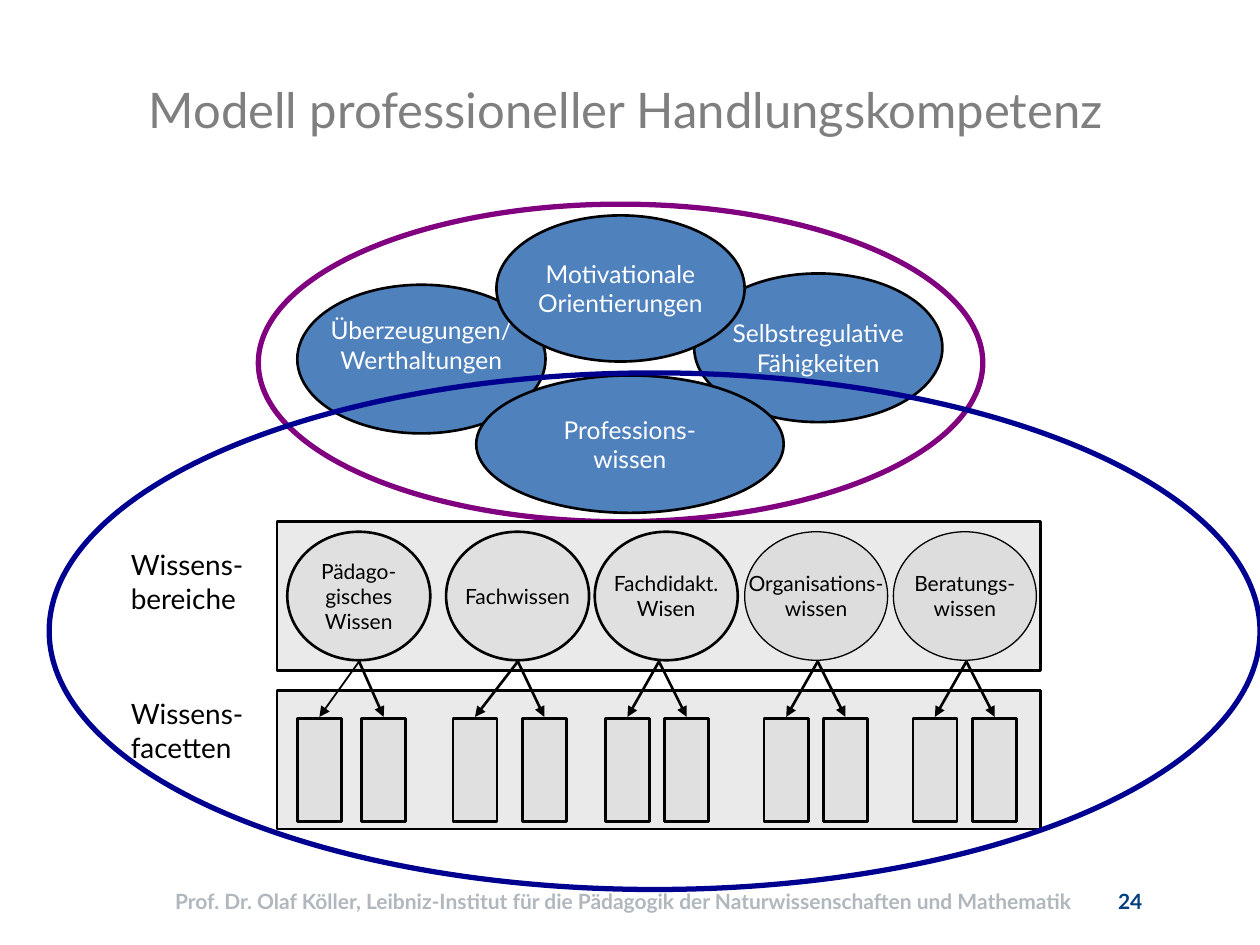
"""Build the slide on the model of professional competence."""
from lxml import etree
from pptx import Presentation
from pptx.dml.color import RGBColor
from pptx.enum import shapes, text
from pptx.oxml import ns
from pptx.util import Pt

COLORS = {
    "title": "7F7F7F", "footer": "B0B7BD", "number": "003F7D",
    "blue": "4F81BD", "white": "FFFFFF", "black": "000000",
    "purple": "800080", "navy": "000090",
    "panel": "EAEAEA", "core": "E0E0E0", "extra": "DDDDDD",
}
OVAL = shapes.MSO_SHAPE.OVAL
RECTANGLE = shapes.MSO_SHAPE.RECTANGLE
CENTER = text.PP_ALIGN.CENTER
MIDDLE = text.MSO_ANCHOR.MIDDLE
TOP = text.MSO_ANCHOR.TOP

deck = Presentation()
deck.slide_width, deck.slide_height = Pt(720), Pt(540)
COLUMN = deck.slide_width / 100
ROW = deck.slide_height / 75
page = deck.slides.add_slide(deck.slide_layouts[5])


def write(box, lines, size, color, align=CENTER, anchor=MIDDLE, bold=False, wrap=False):
    frame = box.text_frame
    frame.auto_size = text.MSO_AUTO_SIZE.NONE
    frame.word_wrap = wrap
    frame.vertical_anchor = anchor
    for index, line in enumerate(lines):
        para = frame.add_paragraph() if index else frame.paragraphs[0]
        para.alignment = align
        span = para.add_run()
        span.text = line
        span.font.name = "Lato"
        span.font.size = Pt(size)
        span.font.bold = bold
        span.font.color.rgb = RGBColor.from_string(COLORS[color])


def draw(kind, left, top, width, height, fill=None, line="black", weight=1.5):
    box = page.shapes.add_shape(
        kind, int(left * COLUMN), int(top * ROW), int(width * COLUMN), int(height * ROW))
    box.shadow.inherit = False
    if fill:
        box.fill.solid()
        box.fill.fore_color.rgb = RGBColor.from_string(COLORS[fill])
    else:
        box.fill.background()
    box.line.color.rgb = RGBColor.from_string(COLORS[line])
    box.line.width = Pt(weight)
    return box


title = page.shapes.title
title.left, title.top = int(10.8 * COLUMN), int(5.8 * ROW)
title.width, title.height = int(89.2 * COLUMN), int(5.7 * ROW)
write(title, ["Modell professioneller Handlungskompetenz"], 28, "title",
      align=text.PP_ALIGN.LEFT, anchor=TOP, wrap=True)

footers = [
    (87.4, 4.6, "24", "number"),
    (11.5, 76, "Prof. Dr. Olaf Köller, Leibniz-Institut für die Pädagogik der "
               "Naturwissenschaften und Mathematik", "footer"),
]
for left, width, line, color in footers:
    box = page.shapes.add_textbox(
        int(left * COLUMN), int(69.5 * ROW), int(width * COLUMN), int(4 * ROW))
    write(box, [line], 12, color, bold=True, wrap=True)

aspects = [
    (55.1, 21.7, 19.7, 11.8, ["Selbstregulative", "Fähigkeiten"]),
    (23.6, 22.6, 19.7, 11.8, ["Überzeugungen/", "Werthaltungen"]),
    (37.8, 29.8, 24.4, 10.9, ["Professions-", "wissen"]),
    (39.4, 17.1, 19.7, 11.6, ["Motivationale", "Orientierungen"]),
]
for left, top, width, height, lines in aspects:
    aspect = draw(OVAL, left, top, width, height, "blue")
    write(aspect, lines, 14, "white")
    if lines[0] == "Überzeugungen/":
        aspect.text_frame.margin_bottom = int(2.8 * ROW)
draw(OVAL, 20.5, 16.2, 57.5, 25.2, line="purple", weight=3)

levels = [
    (41.4, 11.8, 43, ["Wissens-", "bereiche"]),
    (54.8, 11, 54.8, ["Wissens-", "facetten"]),
]
for top, height, label_top, lines in levels:
    draw(RECTANGLE, 22, top, 60.6, height, "panel")
    label = page.shapes.add_textbox(
        int(9.4 * COLUMN), int(label_top * ROW), int(11 * COLUMN), int(6.4 * ROW))
    write(label, lines, 16, "black", align=text.PP_ALIGN.LEFT, anchor=TOP)

domains = [
    (22.8, 28.5, (25.35, 30.45), "core", 1.5, ["Pädago-", "gisches", "Wissen"]),
    (35.4, 41.1, (37.7, 43.2), "core", 1.5, ["Fachwissen"]),
    (47.2, 52.3, (49.8, 54.5), "core", 1.5, ["Fachdidakt.", "Wisen"]),
    (59.1, 64.9, (62.4, 67.1), "extra", 0.75, ["Organisations-", "wissen"]),
    (70.9, 76.7, (74.2, 78.95), "extra", 0.75, ["Beratungs-", "wissen"]),
]
for left, apex, facets, fill, weight, lines in domains:
    write(draw(OVAL, left, 42.2, 11.35, 10.2, fill, weight=weight), lines, 12, "black")
    for facet in facets:
        draw(RECTANGLE, facet - 1.75, 57, 3.5, 8.2, "core")
        arrow = page.shapes.add_connector(
            shapes.MSO_CONNECTOR.STRAIGHT, int(apex * COLUMN), int(52.5 * ROW),
            int(facet * COLUMN), int(56.9 * ROW))
        arrow.line.color.rgb = RGBColor.from_string(COLORS["black"])
        arrow.line.width = Pt(1 if facet == domains[0][2][0] else 1.5)
        etree.SubElement(arrow.line._get_or_add_ln(), ns.qn("a:tailEnd"), type="triangle")
        etree.SubElement(arrow._element.spPr, ns.qn("a:effectLst"))

draw(OVAL, 3.9, 29.6, 96.1, 41, line="navy", weight=3)

deck.save("out.pptx")
